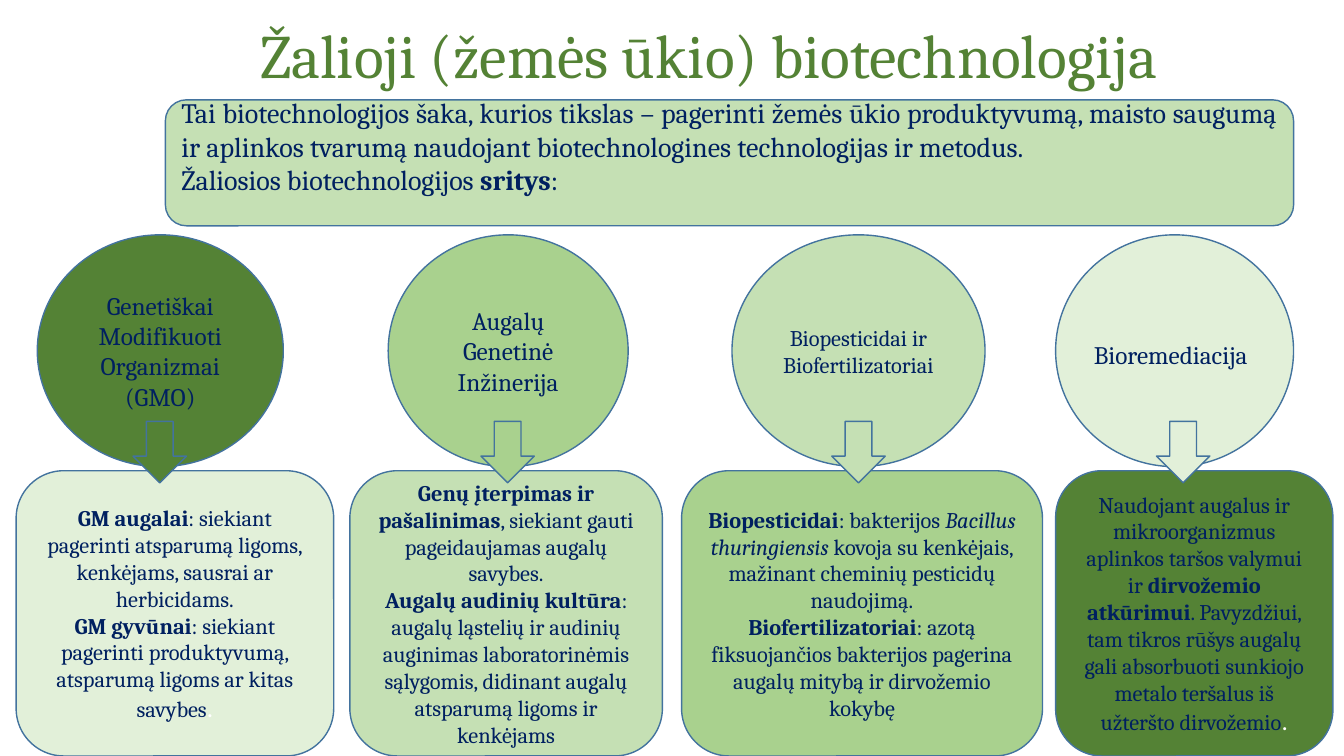
from dataclasses import dataclass

from pptx import Presentation
from pptx.dml.color import RGBColor
from pptx.enum.shapes import MSO_SHAPE as Shape
from pptx.enum.text import MSO_ANCHOR as Anchor, PP_ALIGN as Align
from pptx.util import Pt

PX = 9144  # EMU per px, 100 px to the inch


@dataclass(frozen=True)
class Theme:
    font: str = "Cambria"
    dot_font: str = "Calibri"
    dark: str = "548235"
    mid: str = "A9D18E"
    light: str = "C5E0B4"
    pale: str = "E2F0D9"
    outline: str = "43739E"
    ink: str = "002060"
    white: str = "FFFFFF"
    title: int = 44
    intro: int = 20
    label: int = 18
    body: int = 16


T = Theme()


@dataclass(frozen=True)
class Run:
    text: str
    bold: bool = False
    italic: bool = False
    size: int | None = None
    font: str = T.font
    color: str = T.ink


@dataclass(frozen=True)
class Box:
    x: int
    y: int
    w: int
    h: int

    def emu(self) -> list[int]:
        return [v * PX for v in (self.x, self.y, self.w, self.h)]


@dataclass(frozen=True)
class Field:
    """One area: a circle, the box that explains it and the arrow between."""
    label: str
    label_size: int
    circle_x: int
    circle_w: int
    circle_fill: str
    box_x: int
    box_w: int
    box_fill: str
    arrow_x: int
    details: list[list[Run]]
    own_label: Box | None = None


DOT = Run(".", size=T.label, font=T.dot_font, color=T.white)

FIELDS = [
    Field("Genetiškai Modifikuoti Organizmai (GMO)", T.label, 37, 244, T.dark,
          16, 315, T.pale, 132, [
              [Run("GM augalai", bold=True),
               Run(": siekiant pagerinti atsparumą ligoms, kenkėjams, sausrai ar herbicidams.")],
              [Run("GM gyvūnai", bold=True),
               Run(": siekiant pagerinti produktyvumą, atsparumą ligoms ar kitas savybes"), DOT],
          ]),
    Field("Augalų Genetinė Inžinerija", T.label, 385, 238, T.mid,
          347, 310, T.light, 477, [
              [Run("Genų įterpimas ir pašalinimas", bold=True),
               Run(", siekiant gauti pageidaujamas augalų savybes.")],
              [Run("Augalų audinių kultūra", bold=True),
               Run(": augalų ląstelių ir audinių auginimas laboratorinėmis sąlygomis, "
                   "didinant augalų atsparumą ligoms ir kenkėjams")],
          ]),
    Field("Biopesticidai ir Biofertilizatoriai", T.body, 726, 251, T.light,
          676, 358, T.mid, 825, [
              [Run("Biopesticidai", bold=True), Run(": bakterijos "),
               Run("Bacillus thuringiensis", italic=True),
               Run(" kovoja su kenkėjais, mažinant cheminių pesticidų naudojimą.")],
              [Run("Biofertilizatoriai", bold=True),
               Run(": azotą fiksuojančios bakterijos pagerina augalų mitybą ir dirvožemio kokybę")],
          ]),
    Field("Bioremediacija", T.label, 1047, 236, T.pale,
          1047, 275, T.dark, 1147, [
              [Run("Naudojant augalus ir mikroorganizmus aplinkos taršos valymui ir "),
               Run("dirvožemio atkūrimui", bold=True),
               Run(". Pavyzdžiui, tam tikros rūšys augalų gali absorbuoti sunkiojo metalo "
                   "teršalus iš užteršto dirvožemio"), DOT],
          ], own_label=Box(1075, 332, 181, 40)),
]


def write(tf, paragraphs: list[list[Run]], size: int,
          align: Align = Align.CENTER, anchor: Anchor = Anchor.MIDDLE) -> None:
    tf.word_wrap = True
    tf.vertical_anchor = anchor
    for i, runs in enumerate(paragraphs):
        p = tf.add_paragraph() if i else tf.paragraphs[0]
        p.alignment = align
        for run in runs:
            r = p.add_run()
            r.text = run.text
            r.font.name = run.font
            r.font.size = Pt(run.size or size)
            r.font.bold = run.bold
            r.font.italic = run.italic
            r.font.color.rgb = RGBColor.from_string(run.color)


def add_figure(s, kind: Shape, box: Box, fill: str):
    sp = s.shapes.add_shape(kind, *box.emu())
    sp.shadow.inherit = False
    sp.fill.solid()
    sp.fill.fore_color.rgb = RGBColor.from_string(fill)
    sp.line.color.rgb = RGBColor.from_string(T.outline)
    sp.line.width = Pt(1)
    return sp


def add_text(s, box: Box, run: Run, size: int, anchor: Anchor):
    tf = s.shapes.add_textbox(*box.emu()).text_frame
    write(tf, [[run]], size, Align.LEFT, anchor)
    return tf


def add_field(s, field: Field) -> None:
    circle = add_figure(s, Shape.OVAL, Box(field.circle_x, 233, field.circle_w, 230),
                        field.circle_fill)
    label = Run(field.label)
    if field.own_label:
        add_text(s, field.own_label, label, field.label_size, Anchor.TOP)
    else:
        write(circle.text_frame, [[label]], field.label_size)
    box = add_figure(s, Shape.ROUNDED_RECTANGLE, Box(field.box_x, 467, field.box_w, 283),
                     field.box_fill)
    write(box.text_frame, field.details, T.body)
    add_figure(s, Shape.DOWN_ARROW, Box(field.arrow_x, 418, 53, 61), field.circle_fill)


def main() -> None:
    prs = Presentation()
    prs.slide_width, prs.slide_height = 1333 * PX, 750 * PX
    s = prs.slides.add_slide(prs.slide_layouts[6])

    # Title, indented by one inch
    tf = add_text(s, Box(148, -4, 1150, 124),
                  Run("Žalioji (žemės ūkio) biotechnologija", color=T.dark),
                  T.title, Anchor.MIDDLE)
    tf.margin_left = 110 * PX
    tf.paragraphs[0].line_spacing = 0.9

    # Four fields
    for field in FIELDS:
        add_field(s, field)

    # Introduction, with a line's room left below the text
    intro = add_figure(s, Shape.ROUNDED_RECTANGLE, Box(164, 99, 1119, 125), T.light)
    write(intro.text_frame, [
        [Run("Tai biotechnologijos šaka, kurios tikslas – pagerinti žemės ūkio produktyvumą, "
             "maisto saugumą ir aplinkos tvarumą naudojant biotechnologines technologijas "
             "ir metodus.")],
        [Run("Žaliosios biotechnologijos "), Run("sritys", bold=True), Run(":")],
    ], T.intro, Align.JUSTIFY)
    intro.text_frame.margin_bottom = 38 * PX

    prs.save("out.pptx")


if __name__ == "__main__":
    main()
